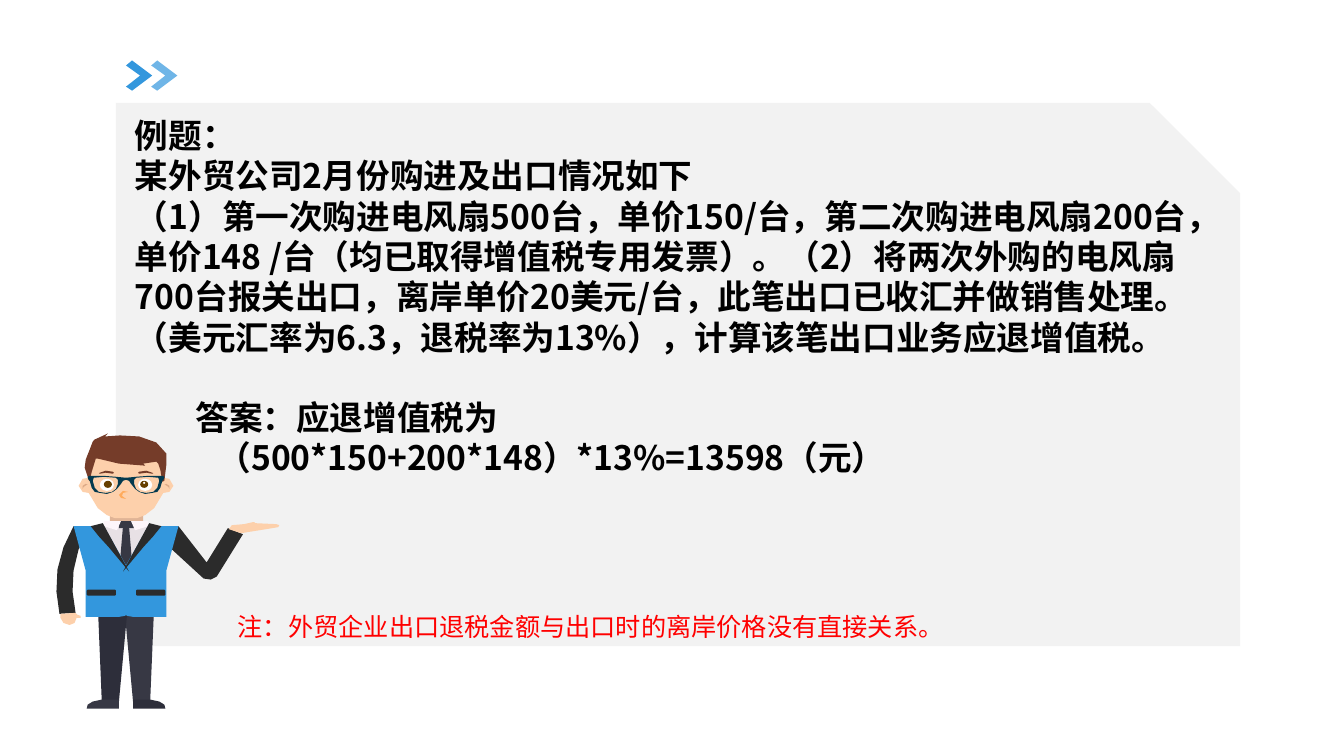
from dataclasses import dataclass

from pptx import Presentation
from pptx import util as u
from pptx.dml.color import RGBColor
from pptx.enum import shapes, text
from pptx.oxml import parse_xml
from pptx.oxml.ns import nsdecls, qn

PX = 9144


@dataclass(frozen=True)
class Theme:
    font: str = "Noto Sans CJK SC"
    note_font: str = "Arial"
    body_size: int = 24
    note_size: int = 18
    body_line: float = 28.8
    ink: str = "000000"
    note: str = "FF0000"
    panel: str = "F2F2F2"
    accent: str = "3397DD"
    sleeve: str = "2B2B2B"
    suit: str = "373844"
    suit_dark: str = "2D2E3A"
    skin: str = "FDD0AB"
    neck: str = "E0B496"
    ear: str = "DDAA87"
    nose: str = "FFAB5C"
    hair: str = "753C29"
    shirt: str = "E8E1E5"
    collar: str = "FEF6FA"
    white: str = "FFFFFF"
    iris: str = "664000"
    glasses: str = "043A4F"


THEME = Theme()
RECTANGLE = shapes.MSO_SHAPE.RECTANGLE
OVAL = shapes.MSO_SHAPE.OVAL
SNIPPED = shapes.MSO_SHAPE.SNIP_1_RECTANGLE

QUESTION = [
    ("例题：", 0, 0),
    ("某外贸公司2月份购进及出口情况如下", 0, 0),
    ("（1）第一次购进电风扇500台，单价150/台，第二次购进电风扇200台，单价148 /台"
     "（均已取得增值税专用发票）。（2）将两次外购的电风扇700台报关出口，离岸单价20美元/台，"
     "此笔出口已收汇并做销售处理。（美元汇率为6.3，退税率为13%），"
     "计算该笔出口业务应退增值税。", 0, 0),
    ("答案：应退增值税为", 60, THEME.body_line),
    ("（500*150+200*148）*13%=13598（元）", 82, 0),
]
NOTE = [("注：外贸企业出口退税金额与出口时的离岸价格没有直接关系。", 101, 0)]

CHEVRON = [(0, 5), (6, 0), (26, 15), (6, 30), (0, 26), (14, 15)]

MIRROR_AXIS = 75
POINTING_ARM = [(127, 92), (155, 128), (176, 94), (191, 100), (165, 142), (159, 145),
                (152, 144), (116, 111)]
FACE = [(39, 19), (111, 19), (112, 44), (118, 45), (122, 52), (118, 58), (112, 59),
        (103, 74), (94, 81), (86, 84), (64, 84), (56, 81), (47, 74), (38, 59), (32, 58),
        (28, 52), (32, 45), (38, 44)]
LEG = [(82, 266), (99, 266), (103, 169), (73, 169)]
TIE = [(66, 163), (75, 169), (84, 163), (78, 92), (72, 92)]
COLLAR = [(84, 96), (97, 92), (97, 87), (80, 87)]
RESTING_ARM = [(25, 178), (9, 179), (6, 157), (7, 135), (13, 113), (23, 92), (38, 95),
               (28, 115), (23, 136), (22, 157)]
RESTING_HAND = [(27, 180), (25, 178), (10, 179), (10, 183), (13, 188), (19, 190),
                (24, 188), (26, 183), (30, 183), (30, 181)]
VEST = [(82, 182), (76, 181), (72, 177), (72, 136), (97, 92), (127, 92), (115, 136),
        (115, 182)]
LAPEL = [(92, 113), (72, 137), (98, 89), (110, 92), (102, 102)]
EAR = [(117, 53), (114, 51), (113, 51), (115, 50), (118, 52), (118, 55)]
HAIR = [(115, 20), (105, 9), (88, 3), (69, 2), (54, 3), (57, 0), (44, 6), (42, 8),
        (39, 16), (35, 26), (34, 34), (38, 46), (39, 47), (41, 38), (45, 25), (47, 25),
        (68, 30), (94, 32), (92, 30), (105, 28), (107, 30), (109, 36), (111, 48),
        (113, 47), (115, 31)]
SHOE = [(82, 264), (99, 264), (108, 266), (113, 269), (114, 273), (82, 273)]
POCKET = [(86, 161), (113, 161), (114, 160), (114, 156), (113, 155), (86, 155),
          (85, 156), (85, 160)]
POINTING_HAND = [(224, 90), (202, 89), (203, 88), (201, 88), (192, 90), (180, 91),
                 (177, 95), (189, 99), (214, 95), (226, 93), (227, 91)]
NOSE = [(77, 58), (72, 57), (68, 61), (70, 64), (75, 65), (71, 62), (72, 59)]
EYEBROW = [(101, 40), (102, 40), (101, 39), (95, 37), (88, 38), (87, 39), (88, 40),
           (95, 39)]
RIM = [(75, 44), (85, 43), (98, 42), (112, 42), (113, 44), (112, 46), (111, 47),
       (109, 54), (106, 58), (101, 59), (94, 60), (88, 58), (84, 55), (80, 50),
       (78, 47), (75, 46)]
LENS = [(83, 50), (85, 55), (89, 58), (95, 59), (102, 58), (106, 54), (108, 47),
        (107, 44), (97, 43), (85, 44), (83, 46)]

FIGURE = [
    ([POINTING_ARM], THEME.sleeve, None),
    ((RECTANGLE, 59, 80, 33, 7), THEME.neck, None),
    ([FACE], THEME.skin, None),
    ([LEG], THEME.suit, THEME.suit_dark),
    ((RECTANGLE, 45, 92, 59, 47), THEME.shirt, None),
    ((RECTANGLE, 68, 87, 15, 7), THEME.suit, None),
    ([TIE], THEME.suit, None),
    ([COLLAR], THEME.collar, THEME.collar),
    ([RESTING_ARM], THEME.sleeve, None),
    ([RESTING_HAND], THEME.skin, None),
    ([VEST], THEME.accent, THEME.accent),
    ([LAPEL], THEME.sleeve, THEME.sleeve),
    ([EAR], THEME.ear, THEME.ear),
    ([HAIR], THEME.hair, None),
    ([SHOE], THEME.suit_dark, THEME.suit),
    ([POCKET], THEME.sleeve, THEME.sleeve),
    ([POINTING_HAND], THEME.skin, None),
    ([NOSE], THEME.nose, None),
    ([EYEBROW], THEME.hair, THEME.hair),
    ((OVAL, 87, 45, 14, 12), THEME.white, THEME.white),
    ((OVAL, 89, 47, 8, 7), THEME.iris, THEME.iris),
    ((OVAL, 92, 48, 2, 2), THEME.white, None),
    ([RIM, LENS], THEME.glasses, THEME.glasses),
]


def paint(shape, colour):
    shape.shadow.inherit = False
    shape.fill.solid()
    shape.fill.fore_color.rgb = RGBColor.from_string(colour)
    shape.line.fill.background()
    return shape


def add_preset(parent, kind, box, colour):
    return paint(parent.shapes.add_shape(kind, *(side * PX for side in box)), colour)


def add_outline(parent, contours, left, top, colour):
    builder = parent.shapes.build_freeform(*contours[0][0], scale=PX)
    builder.add_line_segments(contours[0][1:], close=True)
    for contour in contours[1:]:
        builder.move_to(*contour[0])
        builder.add_line_segments(contour[1:], close=True)
    return paint(builder.convert_to_shape(left * PX, top * PX), colour)


def add_text(slide, box, lines, formats, font, line_spacing=None):
    frame = slide.shapes.add_textbox(*(side * PX for side in box)).text_frame
    frame.word_wrap = True
    frame.auto_size = text.MSO_AUTO_SIZE.NONE
    for index, (line, indent, space) in enumerate(lines):
        paragraph = frame.paragraphs[0] if index == 0 else frame.add_paragraph()
        spacing = {"space_before": u.Pt(space), "line_spacing": line_spacing}
        for name, value in spacing.items():
            setattr(paragraph, name, value)
        paragraph._p.get_or_add_pPr().set("marL", str(indent * PX))
        run = paragraph.add_run()
        run.text = line
        for name, value in formats.items():
            setattr(run.font, name, value)
        run.font.color.rgb = RGBColor.from_string(font[1])
        run.font.name = font[0]
        run._r.get_or_add_rPr().append(
            parse_xml(f'<a:ea {nsdecls("a")} typeface="{THEME.font}"/>'))


def add_example(slide, left, top, width, height):
    add_preset(slide, SNIPPED, (left, top, width, height), THEME.panel)
    add_text(slide, (left + 9, top + 7, width - 10, 454), QUESTION,
             {"size": u.Pt(THEME.body_size), "bold": True},
             (THEME.font, THEME.ink), u.Pt(THEME.body_line))
    add_text(slide, (left + 10, top + 500, 1021, 40), NOTE,
             {"size": u.Pt(THEME.note_size)}, (THEME.note_font, THEME.note))


def add_presenter(slide, left, top):
    group = slide.shapes.add_group_shape()
    for geometry, colour, mirror_colour in FIGURE:
        for flipped, fill in ((False, colour), (True, mirror_colour)):
            if fill is None:
                continue
            if isinstance(geometry, tuple):
                kind, x, y, width, height = geometry
                x = 2 * MIRROR_AXIS - x - width if flipped else x
                add_preset(group, kind, (left + x, top + y, width, height), fill)
            else:
                contours = [[(2 * MIRROR_AXIS - x if flipped else x, y) for x, y in contour]
                            for contour in geometry]
                add_outline(group, contours, left, top, fill)


def add_chevrons(slide, left, top, step):
    group = slide.shapes.add_group_shape()
    for index, opacity in enumerate((100, 70)):
        chevron = add_outline(group, [CHEVRON], left + index * step, top, THEME.accent)
        colour = chevron._element.spPr.find(qn("a:solidFill"))[0]
        colour.append(parse_xml(f'<a:alpha {nsdecls("a")} val="{opacity * 1000}"/>'))


def main():
    presentation = Presentation()
    presentation.slide_width, presentation.slide_height = 1333 * PX, 750 * PX
    slide = presentation.slides.add_slide(presentation.slide_layouts[6])
    add_example(slide, 115, 102, 1115, 539)
    add_presenter(slide, 50, 430)
    add_chevrons(slide, 125, 60, 25)
    presentation.save("out.pptx")


if __name__ == "__main__":
    main()
